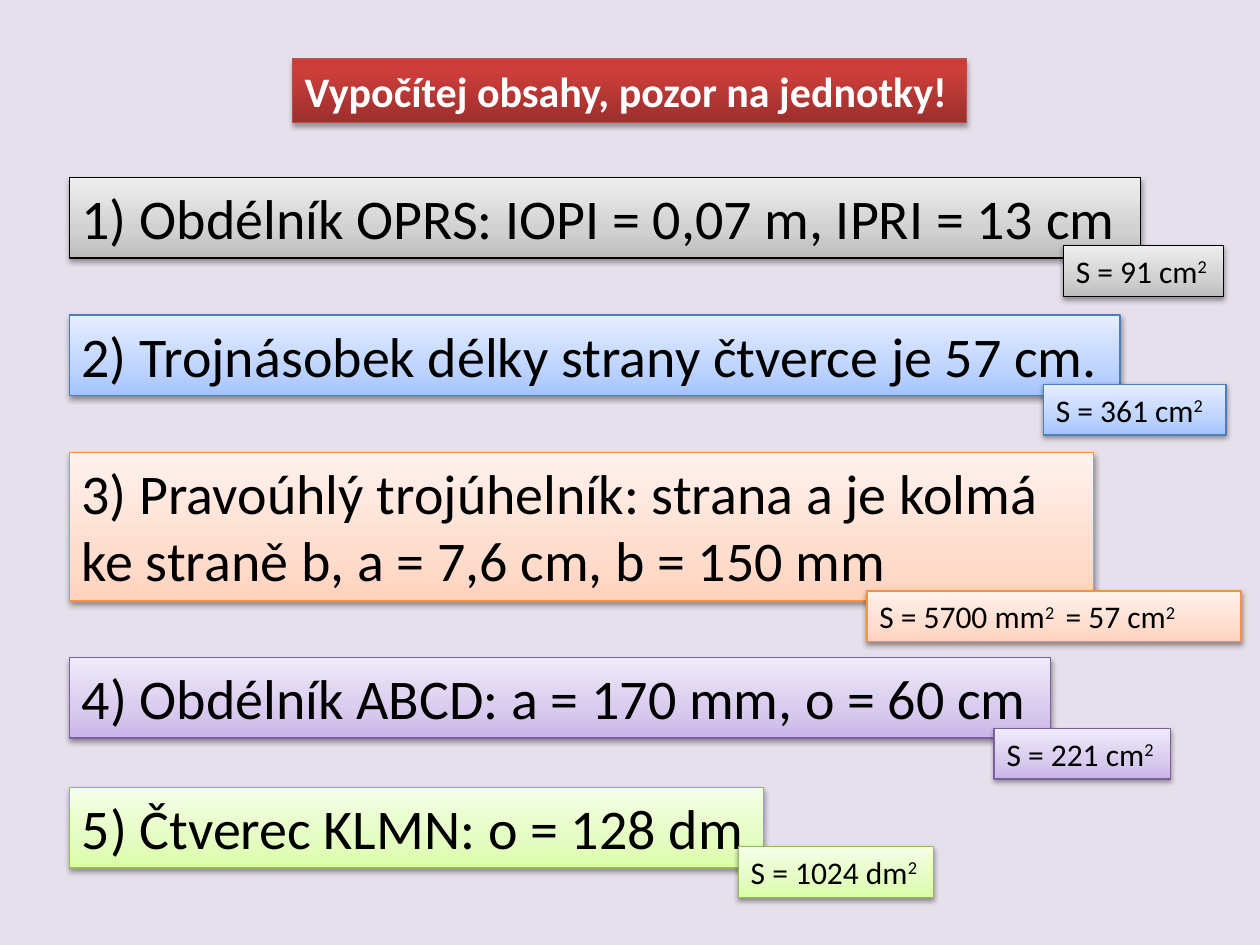
from copy import deepcopy
from lxml.etree import SubElement
from pptx import Presentation
from pptx.dml.color import RGBColor
from pptx.enum.text import MSO_AUTO_SIZE
from pptx.oxml.ns import qn
from pptx.util import Pt

HUES = {
    "back": "E6E0EC",
    "white": "FFFFFF",
    "black": "000000",
    "red": ("9C2F2D", "CB3E3A", "CE3B37", "BF4C48"),
    "gray": ("BDBDBD", "D1D1D1", "EEEEEE", "000000"),
    "blue": ("A4C4FF", "BFD4FF", "E6EEFF", "4B7EBC"),
    "orange": ("FFD2BD", "FFDED0", "FFF2ED", "F69240"),
    "purple": ("C9B5E8", "D8CBEE", "F0EAF9", "7D60A0"),
    "green": ("DAFDA7", "E4FCC2", "F5FFE7", "98B955"),
}

TASKS = [
    ("gray", (39.6, 101.5, 612, 46), "1) Obdélník OPRS: IOPI = 0,07 m, IPRI = 13 cm",
     (568.1, 38.9, 91.4), ["S = 91 cm", "2"]),
    ("blue", (39.6, 180, 600.5, 46), "2) Trojnásobek délky strany čtverce je 57 cm.",
     (556.6, 39.6, 104.4), ["S = 361 cm", "2"]),
    ("orange", (39.6, 258.5, 585.4, 85),
     "3) Pravoúhlý trojúhelník: strana a je kolmá ke straně b, a = 7,6 cm, b = 150 mm",
     (455.8, 79.2, 213.8), ["S = 5700 mm", "2 ", " = 57 cm", "2"]),
    ("purple", (39.6, 375.8, 560.9, 46), "4) Obdélník ABCD: a = 170 mm, o = 60 cm",
     (528.5, 40.4, 100.8), ["S = 221 cm", "2"]),
    ("green", (39.6, 450, 396.7, 46), "5) Čtverec KLMN: o = 128 dm",
     (382.3, 33.8, 111.6), ["S = 1024 dm", "2"]),
]


def shade(shape, hue, mid):
    *tones, edge = HUES[hue]
    fill = shape.fill
    fill.gradient()
    fill.gradient_angle = 90
    stops = shape._element.spPr.find(".//" + qn("a:gsLst"))
    stops.append(deepcopy(stops[-1]))
    for stop, tone, spot in zip(fill.gradient_stops, tones, (0, mid, 1)):
        stop.color.rgb = RGBColor.from_string(tone)
        stop.position = spot
    shape.line.color.rgb = RGBColor.from_string(edge)
    shape.line.width = Pt(0.75)


def cast(shape, gap, dark):
    shape.shadow.inherit = False
    list_ = shape._element.spPr.find(qn("a:effectLst"))
    drop = SubElement(list_, qn("a:outerShdw"), blurRad=str(Pt(3.1)),
                      dist=str(Pt(gap)), dir="5400000", rotWithShape="0")
    tint = SubElement(drop, qn("a:srgbClr"), val=HUES["black"])
    SubElement(tint, qn("a:alpha"), val=str(dark * 1000))


def label(slide, box, parts, hue, size, wrap=False, ink="black", bold=False,
          mid=0.35, gap=1.6, dark=38):
    shape = slide.shapes.add_textbox(*map(Pt, box))
    shade(shape, hue, mid)
    cast(shape, gap, dark)
    frame = shape.text_frame
    frame.word_wrap = wrap
    frame.auto_size = MSO_AUTO_SIZE.SHAPE_TO_FIT_TEXT
    frame.text = parts[0]
    line = frame.paragraphs[0]
    for part in parts[1:]:
        line.add_run().text = part
    for i, run in enumerate(line.runs):
        font = run.font
        font.name = "Calibri"
        font.size = Pt(size)
        font.bold = bold
        font.color.rgb = RGBColor.from_string(HUES[ink])
        if i % 2:
            run._r.get_or_add_rPr().set("baseline", "30000")


def title(slide, box):
    label(slide, box, ["Vypočítej obsahy, pozor na jednotky!"], "red", 24,
          ink="white", bold=True, mid=0.8, gap=1.8, dark=35)


def task(slide, box, hue, text, place, parts):
    left, top, *_ = box
    right, down, width = place
    wrap = hue == "orange"
    label(slide, box, [text], hue, 32, wrap)
    label(slide, (left + right, top + down, width, 29), parts, hue, 18, wrap)


def main():
    deck = Presentation()
    deck.slide_width, deck.slide_height = Pt(720), Pt(540)
    slide = deck.slides.add_slide(deck.slide_layouts[6])
    back = slide.background.fill
    back.solid()
    back.fore_color.rgb = RGBColor.from_string(HUES["back"])
    title(slide, (167, 33.8, 385.2, 36.4))
    for hue, box, text, place, parts in TASKS:
        task(slide, box, hue, text, place, parts)
    deck.save("out.pptx")


if __name__ == "__main__":
    main()
